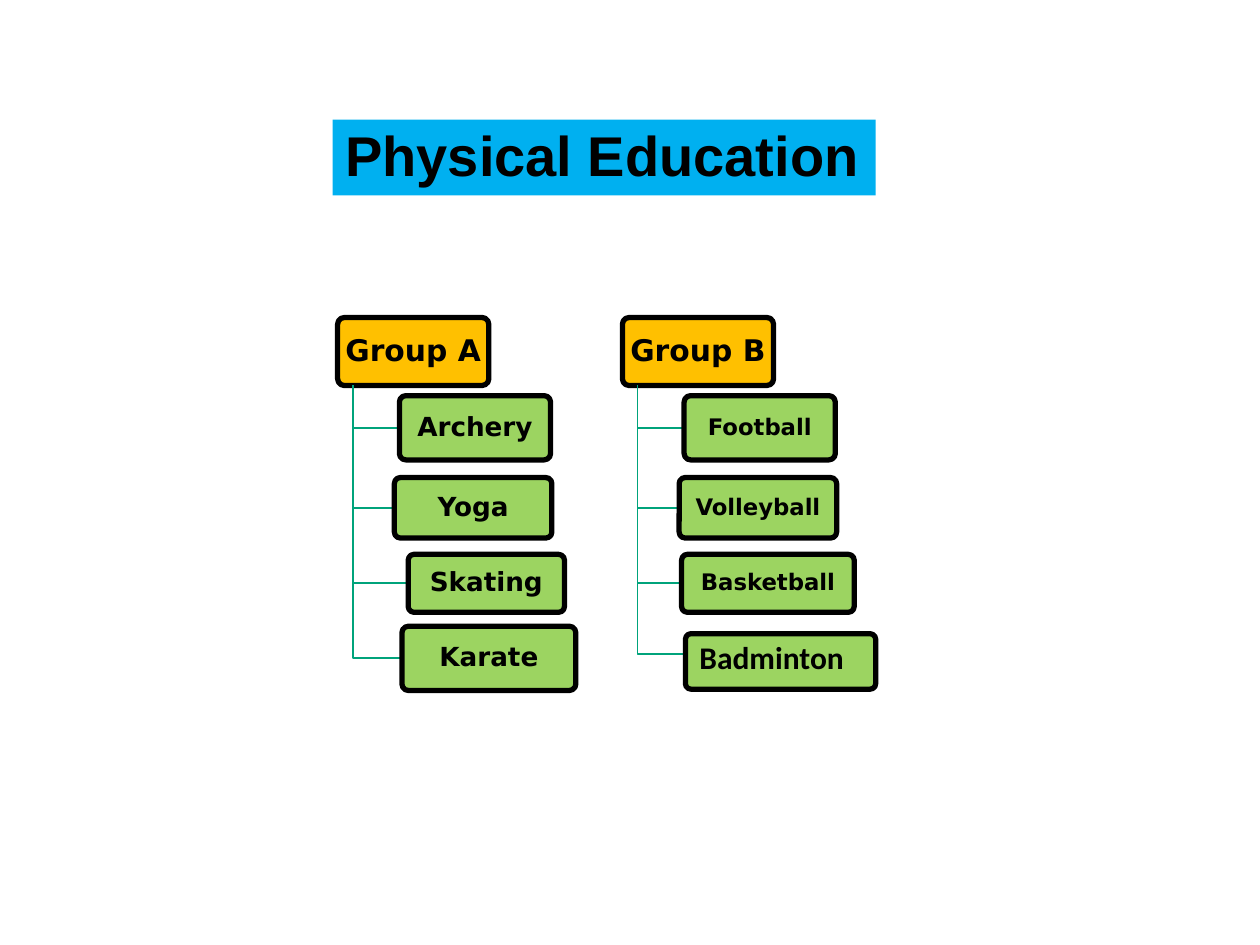
from dataclasses import dataclass

from lxml.etree import SubElement
from pptx import Presentation
from pptx.dml.color import RGBColor
from pptx.enum.shapes import MSO_SHAPE
from pptx.enum.text import MSO_ANCHOR, MSO_AUTO_SIZE, PP_ALIGN
from pptx.oxml.ns import qn
from pptx.util import Inches, Pt


@dataclass(frozen=True)
class Theme:
    ink: str = "000000"
    banner: str = "00B0F0"
    heading: str = "FFC000"
    sport: str = "92D050"
    branch: str = "00A37B"
    sport_opacity: int = 90
    title_font: str = "Arial"
    node_font: str = "DejaVu Sans"
    plain_font: str = "Calibri"
    title_size: int = 32
    heading_size: int = 17
    plain_size: int = 18
    outline: int = 3
    branch_width: int = 1


@dataclass(frozen=True)
class Sport:
    """Indent is counted from the left edge of the group; all in grid units."""
    name: str
    indent: float
    top: float
    width: float
    height: float
    joint: float = 0.5
    plain: bool = False


THEME = Theme()
COLUMNS, ROWS = 100, 75
HEADING_TOP, HEADING_WIDTH, HEADING_HEIGHT = 25.2, 12, 5.4
STEM_INDENT = 1.2

# Heading, left column, type size of the sports, sports
GROUPS = [
    ("Group A", 26.8, 15, [
        Sport("Archery", 4.9, 31.4, 12, 5.1),
        Sport("Yoga", 4.5, 37.9, 12.5, 4.8),
        Sport("Skating", 5.6, 44, 12.4, 4.6),
        Sport("Karate", 5.1, 49.7, 13.8, 5.1),
    ]),
    ("Group B", 49.4, 13, [
        Sport("Football", 4.9, 31.4, 12, 5.1),
        Sport("Volleyball", 4.5, 37.9, 12.5, 4.8),
        Sport("Basketball", 4.7, 44, 13.7, 4.6),
        Sport("Badminton", 5, 50.3, 15.1, 4.4, joint=0.36, plain=True),
    ]),
]


def grid(units):
    return Inches(10 * units / COLUMNS)


def write(frame, text, font, size, align, spacing):
    para = frame.paragraphs[0]
    para.alignment = align
    para.line_spacing = spacing
    span = para.add_run()
    span.text = text
    span.font.name = font
    span.font.size = Pt(size)
    span.font.bold = True
    span.font.color.rgb = RGBColor.from_string(THEME.ink)


def paint(shape, color, opacity=100):
    shape.fill.solid()
    shape.fill.fore_color.rgb = RGBColor.from_string(color)
    if opacity < 100:
        tint = shape.fill._xPr.find(".//" + qn("a:srgbClr"))
        SubElement(tint, qn("a:alpha"), val=str(opacity * 1000))


def add_node(page, left, top, width, height, color, opacity=100):
    box = page.shapes.add_shape(MSO_SHAPE.ROUNDED_RECTANGLE, *map(grid, (left, top, width, height)))
    box.adjustments[0] = 0.1
    box.shadow.inherit = False
    paint(box, color, opacity)
    box.line.color.rgb = RGBColor.from_string(THEME.ink)
    box.line.width = Pt(THEME.outline)
    return box


def write_label(box, text, size):
    frame = box.text_frame
    frame.margin_left = frame.margin_right = Inches(0.04)
    frame.margin_top = frame.margin_bottom = Inches(0.02)
    frame.vertical_anchor = MSO_ANCHOR.MIDDLE
    frame.word_wrap = True
    write(frame, text, THEME.node_font, size, PP_ALIGN.CENTER, 0.9)


def write_plain_label(box, text):
    box.text_frame.vertical_anchor = MSO_ANCHOR.TOP
    write(box.text_frame, text, THEME.plain_font, THEME.plain_size, PP_ALIGN.LEFT, 0.93)


def add_branch(page, stem, top, right, bottom):
    """Draw the elbow that runs down the stem and right to a sport."""
    builder = page.shapes.build_freeform(grid(stem), grid(top))
    builder.add_line_segments(
        [(grid(stem), grid(bottom)), (grid(right), grid(bottom))], close=False)
    elbow = builder.convert_to_shape()
    elbow.shadow.inherit = False
    elbow.fill.background()
    elbow.line.color.rgb = RGBColor.from_string(THEME.branch)
    elbow.line.width = Pt(THEME.branch_width)


def add_group(page, name, left, size, sports):
    heading = add_node(page, left, HEADING_TOP, HEADING_WIDTH, HEADING_HEIGHT, THEME.heading)
    write_label(heading, name, THEME.heading_size)
    for sport in sports:
        sport_left = left + sport.indent
        add_branch(page, left + STEM_INDENT, HEADING_TOP + HEADING_HEIGHT,
                   sport_left, sport.top + sport.height * sport.joint)
        box = add_node(page, sport_left, sport.top, sport.width, sport.height,
                       THEME.sport, THEME.sport_opacity)
        if sport.plain:
            write_plain_label(box, sport.name)
        else:
            write_label(box, sport.name, size)


def set_title(page, text):
    title = page.shapes.title
    title.left, title.top, title.width, title.height = map(grid, (26.4, 9.5, 43.1, 6))
    paint(title, THEME.banner)
    frame = title.text_frame
    frame.auto_size = MSO_AUTO_SIZE.NONE
    frame.word_wrap = False
    frame.vertical_anchor = MSO_ANCHOR.TOP
    write(frame, text, THEME.title_font, THEME.title_size, PP_ALIGN.LEFT, 0.93)


def main():
    deck = Presentation()
    deck.slide_width, deck.slide_height = grid(COLUMNS), grid(ROWS)
    page = deck.slides.add_slide(deck.slide_layouts[5])
    set_title(page, "Physical Education")
    for group in GROUPS:
        add_group(page, *group)
    deck.save("out.pptx")


if __name__ == "__main__":
    main()
